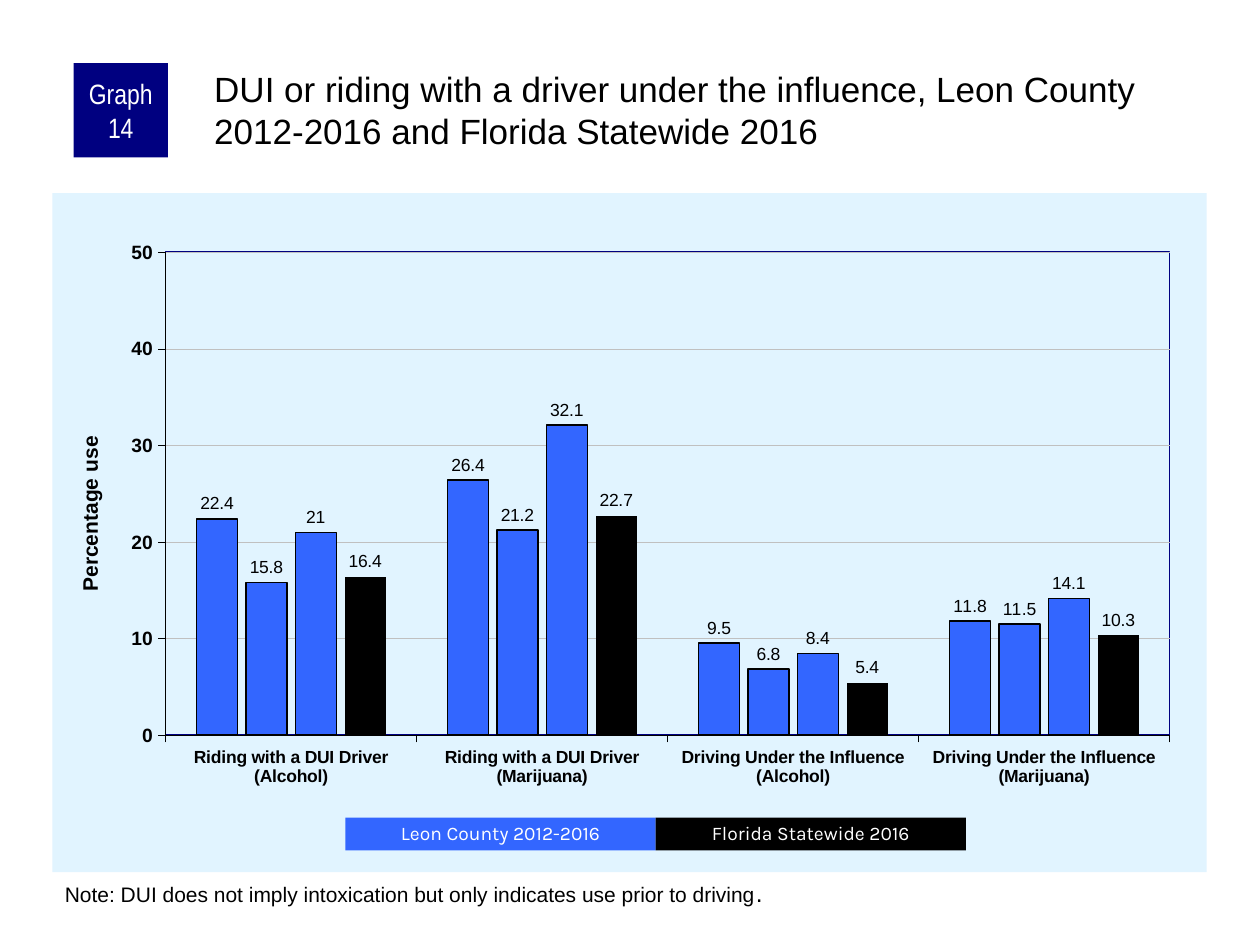
"""Build the slide with the chart of driving under the influence."""
from lxml import etree
from pptx import Presentation
from pptx.chart.data import CategoryChartData
from pptx.dml.color import RGBColor
from pptx.enum.chart import XL_CHART_TYPE, XL_LABEL_POSITION, XL_TICK_MARK
from pptx.enum.shapes import MSO_SHAPE
from pptx.enum.text import MSO_ANCHOR, PP_ALIGN
from pptx.oxml import parse_xml
from pptx.oxml.ns import nsdecls, qn
from pptx.util import Pt

COLUMNS = XL_CHART_TYPE.COLUMN_CLUSTERED
OUTSIDE_END = XL_LABEL_POSITION.OUTSIDE_END
TICK_OUT, TICK_NONE = XL_TICK_MARK.OUTSIDE, XL_TICK_MARK.NONE
RECT = MSO_SHAPE.RECTANGLE
TOP, MIDDLE = MSO_ANCHOR.TOP, MSO_ANCHOR.MIDDLE
LEFT, CENTER = PP_ALIGN.LEFT, PP_ALIGN.CENTER

BLACK = RGBColor(0x00, 0x00, 0x00)
WHITE = RGBColor(0xFF, 0xFF, 0xFF)
NAVY = RGBColor(0x00, 0x00, 0x80)
BLUE = RGBColor(0x33, 0x66, 0xFF)
PALE = RGBColor(0xE1, 0xF4, 0xFF)
GREY = RGBColor(0xC0, 0xC0, 0xC0)


def set_font(font, size, color=BLACK, name="Arial", bold=False):
    font.size, font.name, font.bold = Pt(size), name, bold
    font.color.rgb = color


def write(sp, text, size, color=BLACK, name="Arial", align=LEFT, anchor=TOP,
          margins=(7.2, 3.6, 7.2, 3.6), spacing=None):
    tf = sp.text_frame
    frame = {"word_wrap": True, "vertical_anchor": anchor}
    for side, margin in zip(("left", "top", "right", "bottom"), margins):
        frame["margin_" + side] = Pt(margin)
    for key, value in frame.items():
        setattr(tf, key, value)
    p = tf.paragraphs[0]
    p.alignment, p.line_spacing = align, spacing
    r = p.add_run()
    r.text = text
    set_font(r.font, size, color, name)
    return p


prs = Presentation()
prs.slide_width, prs.slide_height = Pt(720), Pt(540)
s = prs.slides.add_slide(prs.slide_layouts[5])

title = s.shapes.title
title.left, title.top, title.width, title.height = Pt(120), Pt(36), Pt(570), Pt(60)
write(title, "DUI or riding with a driver under the influence, Leon County "
      "2012-2016 and Florida Statewide 2016", 20, margins=(2.4, 2.4, 0, 0))

data = CategoryChartData()
data.categories = [
    "Riding with a DUI Driver (Alcohol)",
    "Riding with a DUI Driver (Marijuana)",
    "Driving Under the Influence (Alcohol)",
    "Driving Under the Influence (Marijuana)",
]
SERIES = [
    ("Series 1", (22.4, 26.4, 9.5, 11.8), BLUE, 1, "0.0"),
    ("Series 2", (15.8, 21.2, 6.8, 11.5), BLUE, 1, "0.0"),
    ("Series 3", (21, 32.1, 8.4, 14.1), BLUE, 0.75, "General"),
    ("Series 4", (16.4, 22.7, 5.4, 10.3), BLACK, 0, "General"),
]
for name, values, *style in SERIES:
    data.add_series(name, values)

chart = s.shapes.add_chart(COLUMNS, Pt(30), Pt(110.4), Pt(659.5), Pt(388), data).chart
chart.has_legend = chart.has_title = False
set_font(chart.font, 11.5)

plot = chart.plots[0]
plot.gap_width, plot.overlap, plot.vary_by_categories = 150, -20, False
for series, (name, values, color, width, number_format) in zip(plot.series, SERIES):
    series.format.fill.solid()
    series.format.fill.fore_color.rgb = color
    if width:
        series.format.line.color.rgb = BLACK
        series.format.line.width = Pt(width)
    else:
        series.format.line.fill.background()
    labels = series.data_labels
    label_format = {"show_value": True, "number_format": number_format,
                    "number_format_is_linked": False, "position": OUTSIDE_END}
    for key, value in label_format.items():
        setattr(labels, key, value)
    set_font(labels.font, 10)

cat_axis, val_axis = chart.category_axis, chart.value_axis
for axis, size in ((cat_axis, 10), (val_axis, 11)):
    axis.major_tick_mark, axis.minor_tick_mark = TICK_OUT, TICK_NONE
    axis.format.line.color.rgb = BLACK
    axis.format.line.width = Pt(0.25)
    set_font(axis.tick_labels.font, size, bold=True)

scale = {"minimum_scale": 0, "maximum_scale": 50, "major_unit": 10,
         "has_major_gridlines": True}
for key, value in scale.items():
    setattr(val_axis, key, value)
val_axis.major_gridlines.format.line.color.rgb = GREY
val_axis.major_gridlines.format.line.width = Pt(0.25)
tf = val_axis.axis_title.text_frame
r = tf.paragraphs[0].add_run()
r.text = "Percentage use"
set_font(r.font, 12, bold=True)

space = chart.element
body = space.find(".//" + qn("c:valAx") + "/" + qn("c:title") + "//" + qn("a:bodyPr"))
body.set("rot", "-5400000")
body.set("vert", "horz")
space.find(qn("c:chart")).addnext(parse_xml(
    f'<c:spPr {nsdecls("c", "a")}><a:solidFill><a:srgbClr val="{PALE}"/></a:solidFill>'
    "<a:ln><a:noFill/></a:ln></c:spPr>"))

area = space.find(".//" + qn("c:plotArea"))
for old in area.findall(qn("c:layout")):
    area.remove(old)
layout = etree.Element(qn("c:layout"))
manual = etree.SubElement(layout, qn("c:manualLayout"))
PLACE = {"layoutTarget": "inner", "xMode": "edge", "yMode": "edge",
         "x": "0.098", "y": "0.087", "w": "0.87", "h": "0.711"}
for key, value in PLACE.items():
    etree.SubElement(manual, qn("c:" + key)).set("val", value)
area.insert(0, layout)
area.append(parse_xml(
    f'<c:spPr {nsdecls("c", "a")}><a:noFill/><a:ln w="{Pt(1)}"><a:solidFill>'
    f'<a:srgbClr val="{NAVY}"/></a:solidFill></a:ln></c:spPr>'))

note = s.shapes.add_textbox(Pt(30), Pt(498.4), Pt(660), Pt(24.5))
p = write(note, "Note: DUI does not imply intoxication but only indicates use "
          "prior to driving", 12)
r = p.add_run()
r.text = "."
set_font(r.font, 14)

BOXES = [
    ("Graph 14", (42, 36, 54, 54), NAVY,
     {"size": 16, "name": "Arial Narrow", "margins": (3.6, 0, 3.6, 0)}),
    ("Leon County 2012-2016", (197.4, 467.2, 177.3, 18.8), BLUE,
     {"size": 11, "name": "Karla", "spacing": 0.9}),
    ("Florida Statewide 2016", (374.7, 467.2, 177.3, 18.8), BLACK,
     {"size": 11, "name": "Karla", "spacing": 0.9}),
]
for text, place, fill, style in BOXES:
    sp = s.shapes.add_shape(RECT, *map(Pt, place))
    sp.shadow.inherit = False
    sp.fill.solid()
    sp.fill.fore_color.rgb = fill
    sp.line.fill.background()
    write(sp, text, color=WHITE, align=CENTER, anchor=MIDDLE, **style)

prs.save("out.pptx")
